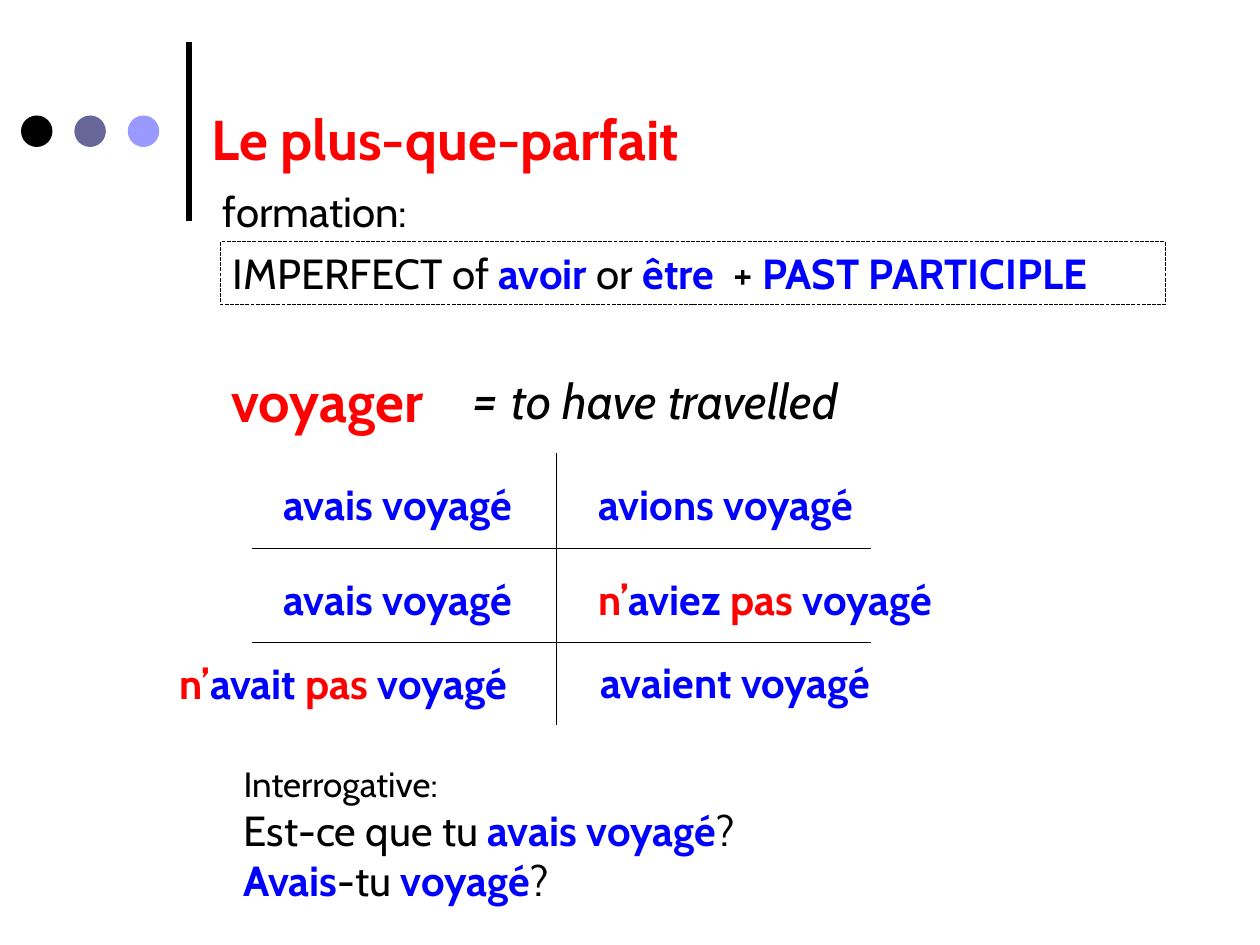
from dataclasses import dataclass

import pptx
import pptx.dml.color
import pptx.enum.dml
import pptx.enum.shapes
import pptx.enum.text
import pptx.oxml.ns
import pptx.util
from pptx.shapes.autoshape import Shape
from pptx.slide import Slide
from pptx.text.text import TextFrame

Pt = pptx.util.Pt
FONT = "Cabin"
HUES = {
    "black": "000000",
    "slate": "666699",
    "lilac": "9999FF",
    "red": "FF0000",
    "blue": "0000FF",
    "white": "FFFFFF",
}


@dataclass(frozen=True)
class Bit:
    text: str
    hue: str = "black"
    size: float = 24
    bold: bool = False
    slant: bool = False


@dataclass(frozen=True)
class Box:
    left: float
    top: float
    width: float
    height: float


@dataclass(frozen=True)
class Label:
    box: Box
    bits: list[Bit]


@dataclass(frozen=True)
class Rule:
    x1: float
    y1: float
    x2: float
    y2: float
    weight: float = 0.75


def blue(text: str) -> Bit:
    return Bit(text, "blue", bold=True)


def red(text: str, size: float = 24) -> Bit:
    return Bit(text, "red", size, bold=True)


def negate(verb: str) -> list[Bit]:
    """Wrap an auxiliary verb in red n’ ... pas."""
    return [red("n’"), blue(verb + " "), red("pas "), blue("voyagé")]


def color(hue: str) -> pptx.dml.color.RGBColor:
    return pptx.dml.color.RGBColor.from_string(HUES[hue])


def write(frame: TextFrame, lines: list[list[Bit]]) -> None:
    frame.word_wrap = True
    frame.auto_size = pptx.enum.text.MSO_AUTO_SIZE.SHAPE_TO_FIT_TEXT
    frame.vertical_anchor = pptx.enum.text.MSO_ANCHOR.TOP
    for i, bits in enumerate(lines):
        para = frame.add_paragraph() if i else frame.paragraphs[0]
        para.alignment = pptx.enum.text.PP_ALIGN.LEFT
        para.space_before = Pt(0)
        for bit in bits:
            run = para.add_run()
            run.text = bit.text
            font = run.font
            font.name, font.size = FONT, Pt(bit.size)
            font.bold, font.italic = bit.bold, bit.slant
            font.color.rgb = color(bit.hue)


def place(shape: Shape, box: Box) -> None:
    shape.left, shape.top = Pt(box.left), Pt(box.top)
    shape.width, shape.height = Pt(box.width), Pt(box.height)


def add_label(slide: Slide, label: Label) -> None:
    box = label.box
    shape = slide.shapes.add_textbox(
        Pt(box.left), Pt(box.top), Pt(box.width), Pt(box.height))
    write(shape.text_frame, [label.bits])


def add_form(slide: Slide, kind: pptx.enum.shapes.MSO_SHAPE, box: Box) -> Shape:
    """Add a preset shape with no shadow, fill or line."""
    shape = slide.shapes.add_shape(
        kind, Pt(box.left), Pt(box.top), Pt(box.width), Pt(box.height))
    shape.shadow.inherit = False
    shape.fill.background()
    shape.line.fill.background()
    return shape


def add_rule(slide: Slide, rule: Rule) -> None:
    line = slide.shapes.add_connector(
        pptx.enum.shapes.MSO_CONNECTOR.STRAIGHT,
        Pt(rule.x1), Pt(rule.y1), Pt(rule.x2), Pt(rule.y2))
    line.line.color.rgb = color("black")
    line.line.width = Pt(rule.weight)
    props = line._element.spPr
    props.append(props.makeelement(pptx.oxml.ns.qn("a:effectLst"), {}))


def clear_bullets(frame: TextFrame) -> None:
    for para in frame.paragraphs:
        props = para._p.get_or_add_pPr()
        props.set("marL", "0")
        props.set("indent", "0")
        props.append(props.makeelement(pptx.oxml.ns.qn("a:buNone"), {}))


LABELS = [
    Label(Box(120.25, 102.25, 512, 36), [Bit("formation:")]),
    Label(Box(125.25, 206, 127, 46), [red("voyager", 32)]),
    Label(Box(263, 204, 271, 46), [
        Bit("= ", size=32, slant=True),
        Bit("to have travelled", size=28, slant=True)]),
    Label(Box(155, 270, 151, 36), [blue("avais voyagé")]),
    Label(Box(155, 324, 151, 36), [blue("avais voyagé")]),
    Label(Box(95.75, 372.25, 222, 36), negate("avait")),
    Label(Box(335, 270, 187, 36), [blue("avions voyagé")]),
    Label(Box(335, 324, 247, 36), negate("aviez")),
    Label(Box(336.25, 371.5, 187, 36), [blue("avaient voyagé")]),
]
RULES = [
    Rule(108, 126, 108, 24, 3),
    Rule(318, 259, 318, 414),
    Rule(144, 313.25, 498, 313.25),
    Rule(144, 367.25, 498, 367.25),
]
FORMULA = [
    Bit("IMPERFECT of "), blue("avoir "), Bit("or "), blue("être  "),
    Bit("+ "), blue("PAST PARTICIPLE"),
]
ASKING = [
    [Bit("Interrogative:", size=20)],
    [Bit("Est-ce que tu "), blue("avais voyagé"), Bit("?")],
    [blue("Avais"), Bit("-tu "), blue("voyagé"), Bit("?")],
]


def main() -> None:
    deck = pptx.Presentation()
    deck.slide_width, deck.slide_height = Pt(720), Pt(540)
    slide = deck.slides.add_slide(deck.slide_layouts[1])
    slide.background.fill.solid()
    slide.background.fill.fore_color.rgb = color("white")

    title, body = slide.placeholders
    place(title, Box(113.75, 56.25, 588, 46))
    write(title.text_frame, [[red("Le plus-que-parfait", 32)]])
    place(body, Box(132, 432, 511, 111.5))
    write(body.text_frame, ASKING)
    clear_bullets(body.text_frame)

    kinds = pptx.enum.shapes.MSO_SHAPE
    for i, hue in enumerate(("black", "slate", "lilac")):
        dot = add_form(slide, kinds.OVAL, Box(12 + 30.5 * i, 66, 18, 18))
        dot.fill.solid()
        dot.fill.fore_color.rgb = color(hue)

    frame = add_form(slide, kinds.RECTANGLE, Box(126, 138, 540, 36))
    frame.line.color.rgb = color("black")
    frame.line.width = Pt(0.75)
    frame.line.dash_style = pptx.enum.dml.MSO_LINE.SQUARE_DOT
    write(frame.text_frame, [FORMULA])

    for rule in RULES:
        add_rule(slide, rule)
    for label in LABELS:
        add_label(slide, label)
    deck.save("out.pptx")


if __name__ == "__main__":
    main()
